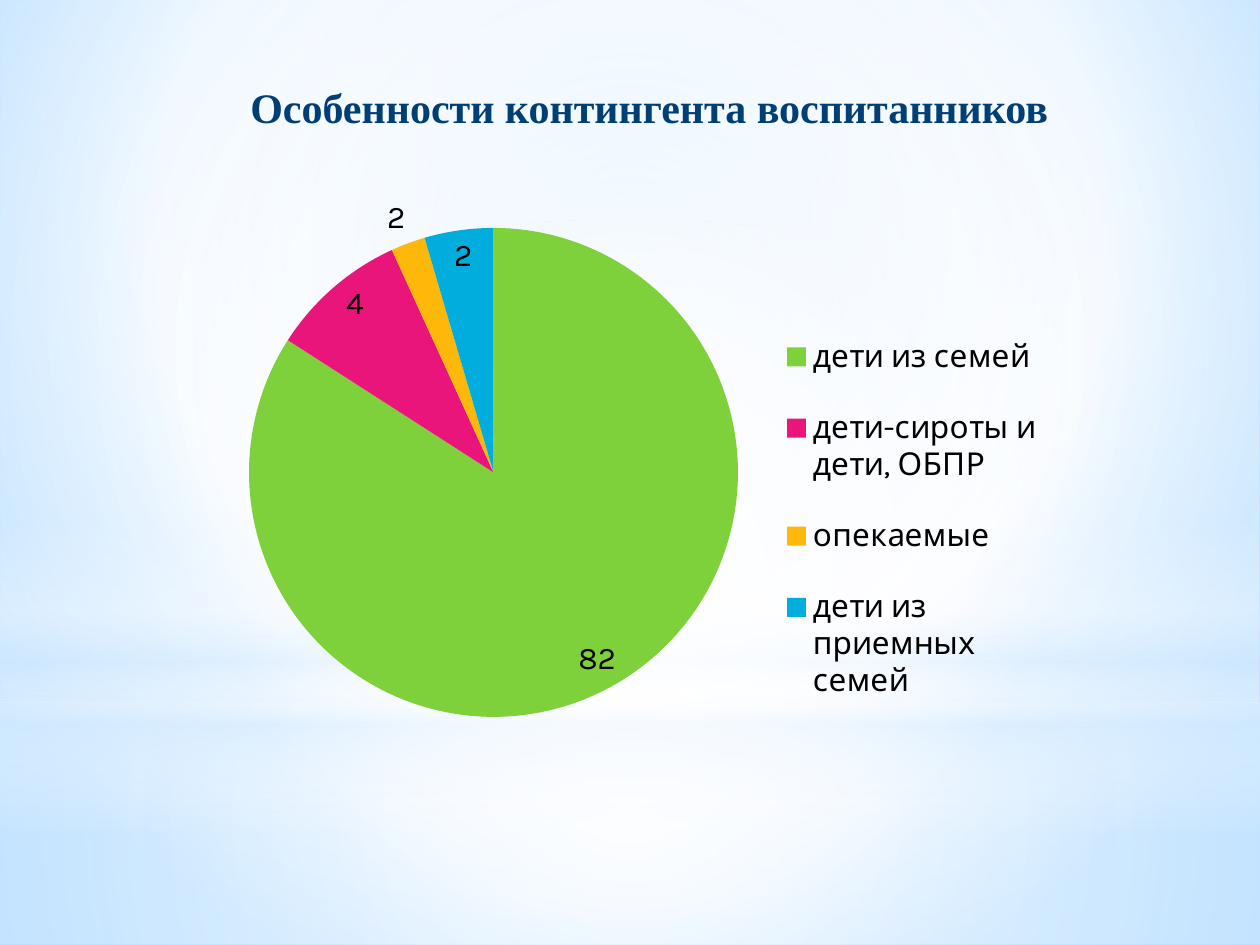
import pptx
import pptx.chart.data
import pptx.dml.color
import pptx.enum.chart
import pptx.enum.shapes
import pptx.enum.text
import pptx.oxml
import pptx.oxml.ns
import pptx.util

RGBColor = pptx.dml.color.RGBColor
Shape = pptx.enum.shapes.MSO_SHAPE
qn = pptx.oxml.ns.qn

EMU_PER_PX = 914400 / 126
WIDTH, HEIGHT, HORIZON = 1260, 945, 703
CHART_BOX = (213, 175, 840, 559)

WHITE = RGBColor(0xFF, 0xFF, 0xFF)
BLACK = RGBColor(0x00, 0x00, 0x00)
PALE = RGBColor(0xD6, 0xEC, 0xFF)
SKY = RGBColor(0xC2, 0xE3, 0xFF)
BLUE = RGBColor(0x79, 0xC1, 0xFF)
NAVY = RGBColor(0x00, 0x3F, 0x75)
GREEN = RGBColor(0x7F, 0xD1, 0x3B)
PINK = RGBColor(0xEA, 0x15, 0x7A)
AMBER = RGBColor(0xFE, 0xB8, 0x0A)
CYAN = RGBColor(0x00, 0xAD, 0xDC)

CENTRE = (50, 50, 50, 50)
GROUPS = [
    ("дети из семей", 74, "82", GREEN),
    ("дети-сироты и дети, ОБПР", 8, "4", PINK),
    ("опекаемые", 2, "2", AMBER),
    ("дети из приемных семей", 4, "2", CYAN),
]


def px(length):
    """Turn pixels into EMU."""
    return pptx.util.Emu(round(length * EMU_PER_PX))


def set_gradient(properties, stops, focus=None):
    """Replace a solid fill by a circular gradient, or a vertical one without focus."""
    stop_xml = "".join(
        f'<a:gs pos="{position * 1000}"><a:srgbClr val="{color}">'
        f'<a:alpha val="{opacity * 1000}"/></a:srgbClr></a:gs>'
        for position, color, opacity in stops
    )
    direction = '<a:lin ang="5400000" scaled="0"/>'
    if focus:
        sides = " ".join(f'{side}="{value * 1000}"' for side, value in zip("ltrb", focus))
        direction = f'<a:path path="circle"><a:fillToRect {sides}/></a:path>'
    gradient = pptx.oxml.parse_xml(
        f'<a:gradFill {pptx.oxml.ns.nsdecls("a")} rotWithShape="1">'
        f"<a:gsLst>{stop_xml}</a:gsLst>{direction}</a:gradFill>"
    )
    properties.replace(properties.find(qn("a:solidFill")), gradient)


def set_background(slide, stops, focus):
    """Give the slide a gradient background."""
    slide.background.fill.solid()
    properties = slide.element.find(f'.//{qn("p:bgPr")}')
    set_gradient(properties, stops, focus)


def add_glow(slide, kind, top, height, stops, focus=None):
    """Add a full-width gradient shape without an outline."""
    shape = slide.shapes.add_shape(kind, 0, px(top), px(WIDTH), px(height))
    shape.shadow.inherit = False
    shape.line.fill.background()
    shape.fill.solid()
    set_gradient(shape.element.spPr, stops, focus)


def write_text(text_frame, text, *, size, font, color, bold=False, align=None):
    """Write one formatted paragraph."""
    paragraph = text_frame.paragraphs[0]
    paragraph.alignment = align
    run = paragraph.add_run()
    run.text = text
    run.font.size = pptx.util.Pt(size)
    run.font.name = font
    run.font.bold = bold
    run.font.color.rgb = color


def add_title(slide, text):
    """Place the title in front of the background shapes."""
    title = slide.shapes.title
    title.left, title.top, title.width, title.height = map(px, (164, 75, 897, 158))
    title.text_frame.word_wrap = True
    title.text_frame.vertical_anchor = pptx.enum.text.MSO_ANCHOR.TOP
    write_text(title.text_frame, text, size=24, font="Times New Roman", color=NAVY,
               bold=True, align=pptx.enum.text.PP_ALIGN.RIGHT)
    slide.shapes.element.append(title.element)


def set_layout(element, index, target, left, top, width, height):
    """Fix the place of a chart part, given in pixels on the slide."""
    for layout in element.findall(qn("c:layout")):
        element.remove(layout)
    chart_left, chart_top, chart_width, chart_height = CHART_BOX
    fractions = {
        "x": (left - chart_left) / chart_width,
        "y": (top - chart_top) / chart_height,
        "w": width / chart_width,
        "h": height / chart_height,
    }
    inner = f'<c:layoutTarget val="{target}"/>' if target else ""
    modes = '<c:xMode val="edge"/><c:yMode val="edge"/>'
    values = "".join(f'<c:{name} val="{value}"/>' for name, value in fractions.items())
    element.insert(index, pptx.oxml.parse_xml(
        f'<c:layout {pptx.oxml.ns.nsdecls("c")}><c:manualLayout>'
        f"{inner}{modes}{values}</c:manualLayout></c:layout>"
    ))


def add_pie(slide, groups):
    """Add the pie chart with a legend and a label on each slice."""
    data = pptx.chart.data.CategoryChartData()
    data.categories = [group[0] for group in groups]
    data.add_series("Series 1", [group[1] for group in groups])
    chart = slide.shapes.add_chart(
        pptx.enum.chart.XL_CHART_TYPE.PIE, *map(px, CHART_BOX), data
    ).chart
    chart.has_title = False
    chart.font.name = "Karla"
    chart.font.size = pptx.util.Pt(18)
    chart.font.color.rgb = BLACK
    chart.has_legend = True
    chart.legend.position = pptx.enum.chart.XL_LEGEND_POSITION.RIGHT
    chart.legend.include_in_layout = False
    chart.plots[0].vary_by_categories = True
    series = chart.plots[0].series[0]
    series.data_labels.show_value = True
    for index, (_, _, label, color) in enumerate(groups):
        point = series.points[index]
        point.format.fill.solid()
        point.format.fill.fore_color.rgb = color
        write_text(point.data_label.text_frame, label, size=18, font="Karla", color=BLACK)
        point.data_label.position = pptx.enum.chart.XL_LABEL_POSITION.BEST_FIT
    plot_area = chart.element.find(f'.//{qn("c:plotArea")}')
    set_layout(plot_area, 0, "inner", 249, 228, 489, 489)
    legend = chart.element.find(f'.//{qn("c:legend")}')
    set_layout(legend, 1, None, 787, 304, 260, 430)


def main():
    """Build the slide and save it."""
    presentation = pptx.Presentation()
    presentation.slide_width, presentation.slide_height = px(WIDTH), px(HEIGHT)
    slide = presentation.slides.add_slide(presentation.slide_layouts[5])
    set_background(slide, [(0, SKY, 100), (60, WHITE, 100), (100, BLUE, 100)],
                   (20, 10, 20, 60))
    add_glow(slide, Shape.RECTANGLE, HORIZON, HEIGHT - HORIZON,
             [(0, WHITE, 91), (37, WHITE, 76), (100, PALE, 79)], CENTRE)
    add_glow(slide, Shape.RECTANGLE, 0, HORIZON,
             [(0, WHITE, 89), (48, WHITE, 62), (100, PALE, 79)], CENTRE)
    add_glow(slide, Shape.RECTANGLE, 519, 315,
             [(0, WHITE, 0), (29, WHITE, 30), (45, PALE, 40),
              (55, WHITE, 26), (65, PALE, 60), (100, WHITE, 0)])
    add_glow(slide, Shape.OVAL, 220, HORIZON,
             [(0, WHITE, 100), (56, WHITE, 0)], CENTRE)
    add_title(slide, "Особенности контингента воспитанников")
    add_pie(slide, GROUPS)
    presentation.save("out.pptx")


if __name__ == "__main__":
    main()
